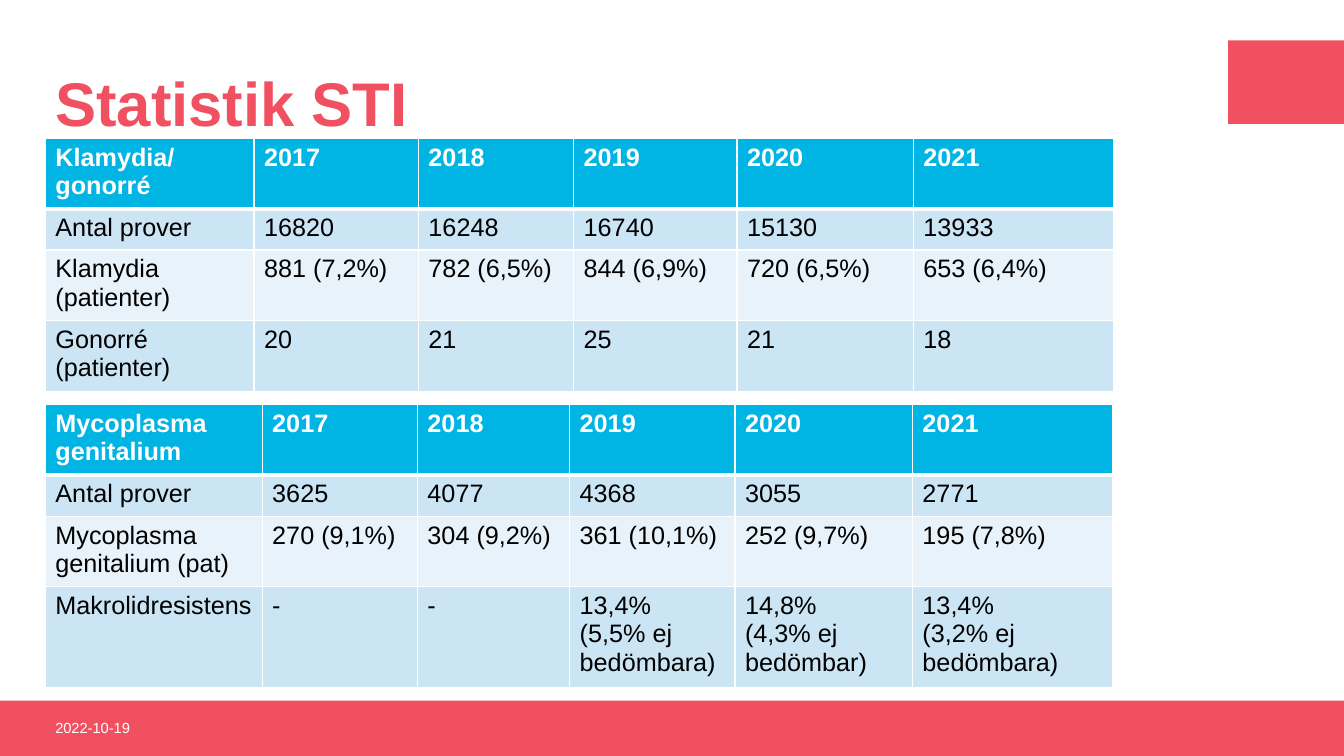
from lxml import etree
from pptx import Presentation
from pptx.dml.color import RGBColor
from pptx.enum import shapes, text
from pptx.oxml import ns
from pptx.util import Inches, Pt

COLORS = {"coral": "F15060", "header": "00B4E4", "band": "CCE5F5",
          "light": "E7F2FA", "white": "FFFFFF", "black": "000000"}
YEARS = ["2017", "2018", "2019", "2020", "2021"]
BLOCKS = [(0, 6.95, 13.33, 0.55), (12.18, 0.4, 1.15, 0.83)]
LABELS = [
    ("Statistik STI", (0.45, 0.4, 11.61, 1.32),
     {"size": Pt(44), "bold": True}, "coral", 0.9),
    ("2022-10-19", (0.45, 6.95, 3, 0.54),
     {"size": Pt(10.5), "bold": False}, "white", 1.0),
]
TABLES = [
    {
        "top": 1.37,
        "cols": [2.07, 1.63, 1.54, 1.62, 1.75, 1.99],
        "heights": [0.65, 0.41, 0.66, 0.66],
        "rows": [
            ["Klamydia/ gonorré"] + YEARS,
            ["Antal prover", "16820", "16248", "16740", "15130", "13933"],
            ["Klamydia (patienter)", "881 (7,2%)", "782 (6,5%)",
             "844 (6,9%)", "720 (6,5%)", "653 (6,4%)"],
            ["Gonorré (patienter)", "20", "21", "25", "21", "18"],
        ],
    },
    {
        "top": 4.01,
        "cols": [2.15, 1.54, 1.51, 1.64, 1.76, 1.99],
        "heights": [0.65, 0.41, 0.66, 0.93],
        "rows": [
            ["Mycoplasma genitalium"] + YEARS,
            ["Antal prover", "3625", "4077", "4368", "3055", "2771"],
            ["Mycoplasma genitalium (pat)", "270 (9,1%)", "304 (9,2%)",
             "361 (10,1%)", "252 (9,7%)", "195 (7,8%)"],
            ["Makrolidresistens", "-", "-", "13,4%\n(5,5% ej bedömbara)",
             "14,8%\n(4,3% ej bedömbar)", "13,4%\n(3,2% ej bedömbara)"],
        ],
    },
]


def rgb(name):
    return RGBColor.from_string(COLORS[name])


def format_text(tf, values, color):
    for p in tf.paragraphs:
        for r in p.runs:
            for key, value in {"name": "Arial", **values}.items():
                setattr(r.font, key, value)
            r.font.color.rgb = rgb(color)


def add_borders(cell, widths):
    tc_pr = cell._tc.get_or_add_tcPr()
    for side, width in widths.items():
        ln = etree.SubElement(tc_pr, ns.qn(f"a:ln{side}"), w=str(Pt(width)))
        fill = etree.SubElement(ln, ns.qn("a:solidFill"))
        etree.SubElement(fill, ns.qn("a:srgbClr"), val=COLORS["white"])


def add_block(s, box):
    sp = s.shapes.add_shape(shapes.MSO_SHAPE.RECTANGLE, *map(Inches, box))
    sp.shadow.inherit = False
    sp.fill.solid()
    sp.fill.fore_color.rgb = rgb("coral")
    sp.line.fill.background()


def add_label(s, content, box, values, color, spacing):
    tf = s.shapes.add_textbox(*map(Inches, box)).text_frame
    tf.word_wrap = True
    tf.vertical_anchor = text.MSO_ANCHOR.MIDDLE
    p = tf.paragraphs[0]
    p.text = content
    p.line_spacing = spacing
    format_text(tf, values, color)


def add_statistics(s, top, cols, heights, rows):
    size = (sum(cols), sum(heights))
    table = s.shapes.add_table(len(rows), len(cols), Inches(0.45), Inches(top),
                               *map(Inches, size)).table
    for col, width in zip(table.columns, cols):
        col.width = Inches(width)
    for i, values in enumerate(rows):
        table.rows[i].height = Inches(heights[i])
        header = i == 0
        fill = "header" if header else "band" if i % 2 else "light"
        borders = {"L": 1, "R": 1, "T": 3 if i == 1 else 1, "B": 3 if header else 1}
        for j, value in enumerate(values):
            cell = table.cell(i, j)
            cell.text = value
            add_borders(cell, borders)
            cell.fill.solid()
            cell.fill.fore_color.rgb = rgb(fill)
            format_text(cell.text_frame, {"size": Pt(18), "bold": header},
                        "white" if header else "black")


def main():
    prs = Presentation()
    prs.slide_width, prs.slide_height = Inches(13.33), Inches(7.5)
    s = prs.slides.add_slide(prs.slide_layouts[6])
    for box in BLOCKS:
        add_block(s, box)
    for label in LABELS:
        add_label(s, *label)
    for statistics in TABLES:
        add_statistics(s, **statistics)
    prs.save("out.pptx")


if __name__ == "__main__":
    main()
